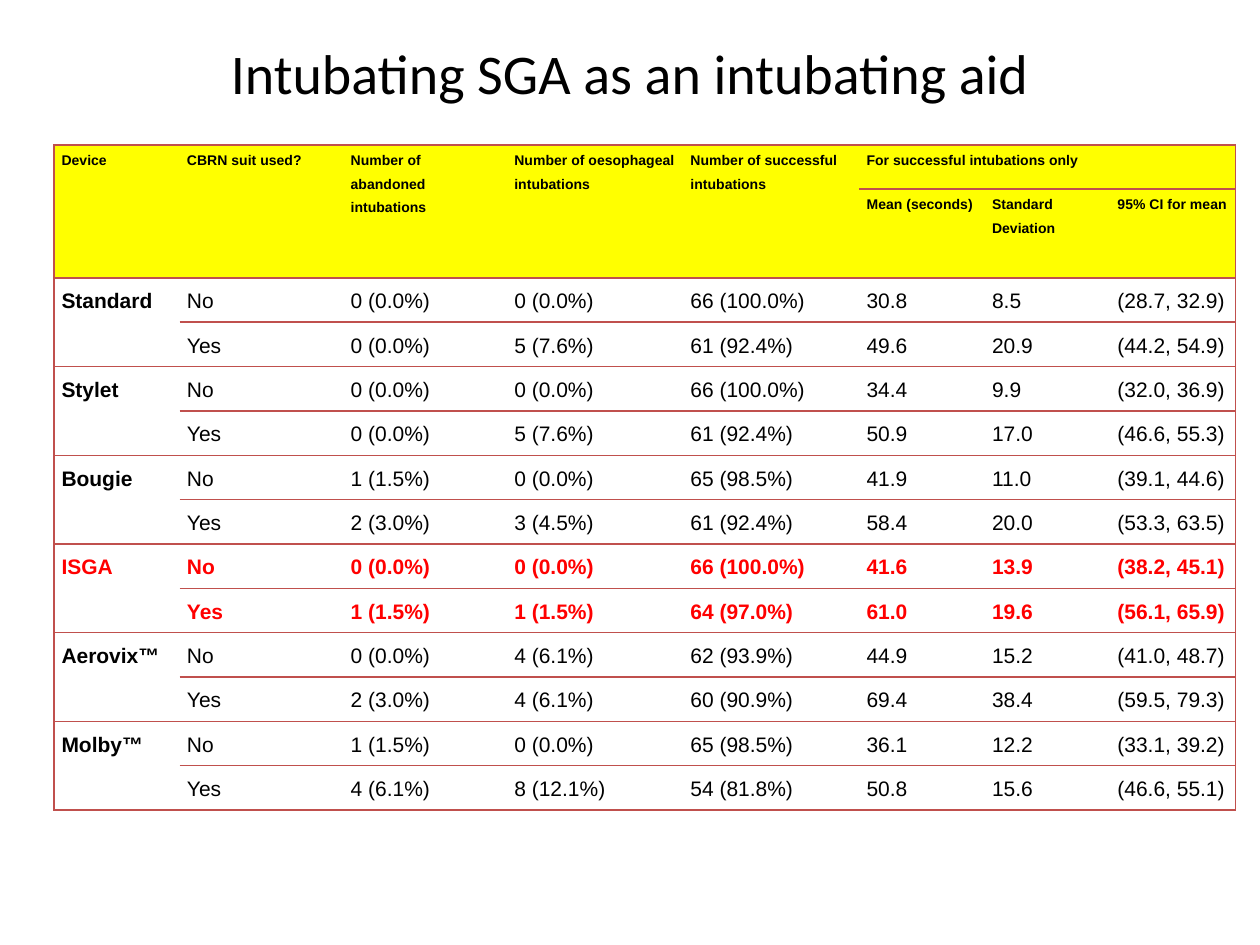
from dataclasses import dataclass
from lxml.etree import SubElement
from pptx import Presentation
from pptx.dml.color import RGBColor
from pptx.enum.text import MSO_ANCHOR, PP_ALIGN
from pptx.oxml.ns import qn
from pptx.util import Cm, Pt


@dataclass(frozen=True)
class Theme:
    title_font: str = "Calibri"
    table_font: str = "Arial"
    title_size: int = 32
    header_size: int = 8
    body_size: int = 12
    text: str = "000000"
    accent: str = "FF0000"
    header_fill: str = "FFFF00"
    border: str = "C0504D"
    border_width: int = 1
    line_spacing: float = 1.5
    inset: float = 0.15
    table_style: str = "{2D5ABB26-0587-4C30-8999-92F81FD0307C}"


class SlideBuilder:
    def __init__(self, prs, theme):
        self.theme = theme
        self.s = prs.slides.add_slide(prs.slide_layouts[5])

    def format_text(self, tf, name, size, color, bold, **paragraph):
        for p in tf.paragraphs:
            for key, value in paragraph.items():
                setattr(p, key, value)
            for r in p.runs:
                for key, value in {"name": name, "size": Pt(size), "bold": bold}.items():
                    setattr(r.font, key, value)
                r.font.color.rgb = RGBColor.from_string(color)

    def title(self, text, left, top, width, height):
        sp = self.s.shapes.title
        box = {"left": left, "top": top, "width": width, "height": height}
        for key, value in box.items():
            setattr(sp, key, Cm(value))
        tf = sp.text_frame
        tf.text = text
        tf.vertical_anchor = MSO_ANCHOR.MIDDLE
        self.format_text(tf, self.theme.title_font, self.theme.title_size,
                         self.theme.text, False, alignment=PP_ALIGN.CENTER)

    def table(self, left, top, widths, heights):
        frame = self.s.shapes.add_table(len(heights), len(widths), Cm(left), Cm(top),
                                        Cm(sum(widths)), Cm(sum(heights)))
        table = frame.table
        for column, width in zip(table.columns, widths):
            column.width = Cm(width)
        for row, height in zip(table.rows, heights):
            row.height = Cm(height)
        for key in ("first_row", "horz_banding"):
            setattr(table, key, False)
        frame._element.find(".//" + qn("a:tableStyleId")).text = self.theme.table_style
        return table

    def cell(self, cell, text, size, color, bold):
        cell.text = text
        inset = Cm(self.theme.inset)
        margins = {"margin_left": inset, "margin_right": inset,
                   "margin_top": 0, "margin_bottom": 0}
        for key, value in margins.items():
            setattr(cell, key, value)
        self.format_text(cell.text_frame, self.theme.table_font, size, color, bold,
                         line_spacing=self.theme.line_spacing)

    def fill(self, cell, color):
        if color:
            cell.fill.solid()
            cell.fill.fore_color.rgb = RGBColor.from_string(color)
        else:
            cell.fill.background()

    def borders(self, cell, sides):
        tc_pr = cell._tc.get_or_add_tcPr()
        for i, side in enumerate(sides):
            ln = SubElement(tc_pr, qn("a:ln" + side), w=str(Pt(self.theme.border_width)))
            solid = SubElement(ln, qn("a:solidFill"))
            SubElement(solid, qn("a:srgbClr"), val=self.theme.border)
            tc_pr.insert(i, ln)


HEADERS = ["Device", "CBRN suit used?", "Number of\vabandoned intubations",
           "Number of oesophageal intubations", "Number of successful intubations",
           "For successful intubations only"]
SUBHEADERS = ["Mean (seconds)", "Standard Deviation", "95% CI for mean"]
RESULTS = {
    "Standard": [
        ["No", "0 (0.0%)", "0 (0.0%)", "66 (100.0%)", "30.8", "8.5", "(28.7, 32.9)"],
        ["Yes", "0 (0.0%)", "5 (7.6%)", "61 (92.4%)", "49.6", "20.9", "(44.2, 54.9)"]],
    "Stylet": [
        ["No", "0 (0.0%)", "0 (0.0%)", "66 (100.0%)", "34.4", "9.9", "(32.0, 36.9)"],
        ["Yes", "0 (0.0%)", "5 (7.6%)", "61 (92.4%)", "50.9", "17.0", "(46.6, 55.3)"]],
    "Bougie": [
        ["No", "1 (1.5%)", "0 (0.0%)", "65 (98.5%)", "41.9", "11.0", "(39.1, 44.6)"],
        ["Yes", "2 (3.0%)", "3 (4.5%)", "61 (92.4%)", "58.4", "20.0", "(53.3, 63.5)"]],
    "ISGA": [
        ["No", "0 (0.0%)", "0 (0.0%)", "66 (100.0%)", "41.6", "13.9", "(38.2, 45.1)"],
        ["Yes", "1 (1.5%)", "1 (1.5%)", "64 (97.0%)", "61.0", "19.6", "(56.1, 65.9)"]],
    "Aerovix™": [
        ["No", "0 (0.0%)", "4 (6.1%)", "62 (93.9%)", "44.9", "15.2", "(41.0, 48.7)"],
        ["Yes", "2 (3.0%)", "4 (6.1%)", "60 (90.9%)", "69.4", "38.4", "(59.5, 79.3)"]],
    "Molby™": [
        ["No", "1 (1.5%)", "0 (0.0%)", "65 (98.5%)", "36.1", "12.2", "(33.1, 39.2)"],
        ["Yes", "4 (6.1%)", "8 (12.1%)", "54 (81.8%)", "50.8", "15.6", "(46.6, 55.1)"]],
}
HIGHLIGHT = "ISGA"
WIDTHS = [2.53, 3.3, 3.3, 3.55, 3.55, 2.53, 2.53, 2.53]
ROW_HEIGHT = 13.41 / 15


def main():
    prs = Presentation()
    prs.slide_width, prs.slide_height = Cm(25.4), Cm(19.05)
    theme = Theme()
    slide = SlideBuilder(prs, theme)
    slide.title("Intubating SGA as an intubating aid", 1.27, 0.76, 22.86, 1.37)

    body_rows = 2 * len(RESULTS)
    heights = [ROW_HEIGHT, 2 * ROW_HEIGHT] + [ROW_HEIGHT] * body_rows
    table = slide.table(1.09, 2.92, WIDTHS, heights)
    last = len(WIDTHS) - 1

    for col in range(5):
        table.cell(0, col).merge(table.cell(1, col))
    table.cell(0, 5).merge(table.cell(0, last))
    for col, text in enumerate(HEADERS):
        slide.cell(table.cell(0, col), text, theme.header_size, theme.text, True)
    for col, text in enumerate(SUBHEADERS, 5):
        slide.cell(table.cell(1, col), text, theme.header_size, theme.text, True)

    for i, (device, records) in enumerate(RESULTS.items()):
        top = 2 + 2 * i
        marked = device == HIGHLIGHT
        color = theme.accent if marked else theme.text
        table.cell(top, 0).merge(table.cell(top + 1, 0))
        slide.cell(table.cell(top, 0), device, theme.body_size, color, True)
        for row, record in enumerate(records, top):
            for col, value in enumerate(record, 1):
                slide.cell(table.cell(row, col), value, theme.body_size, color, marked)

    for row in range(len(heights)):
        for col in range(len(WIDTHS)):
            cell = table.cell(row, col)
            slide.fill(cell, theme.header_fill if row < 2 else None)
            right_edge = col == last or (cell.is_merge_origin and col + cell.span_width > last)
            sides = ["L"] * (col == 0) + ["R"] * right_edge
            hidden_top = cell.is_spanned and row % 2 == 1
            slide.borders(cell, sides + ["T"] * (not hidden_top) + ["B"])

    prs.save("out.pptx")


if __name__ == "__main__":
    main()
